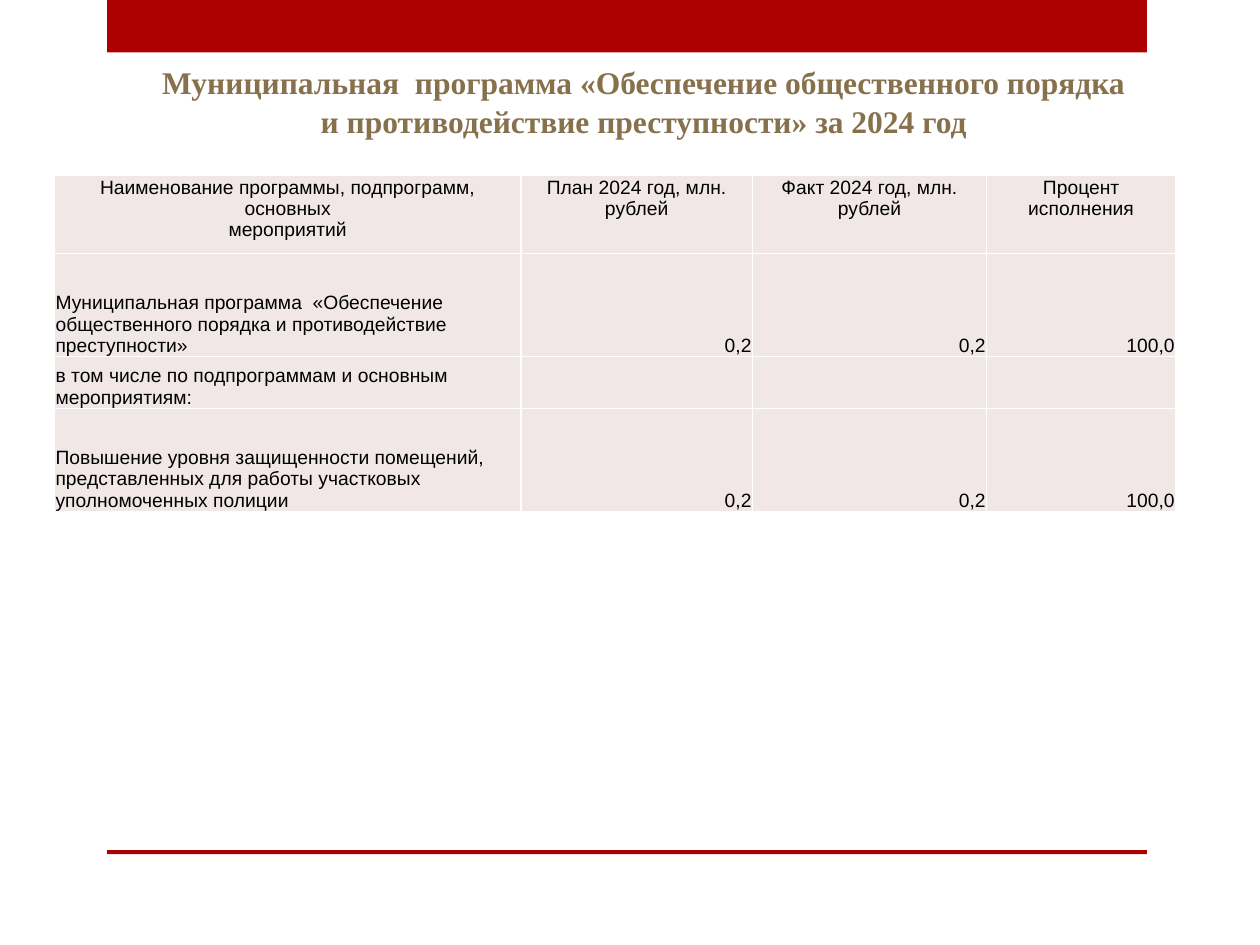
from lxml import etree
from pptx import Presentation
from pptx import util as u
from pptx.dml.color import RGBColor
from pptx.enum import shapes, text
from pptx.oxml import ns

RED, GOLD, PINK, BLACK, WHITE = "AD0101", "87714D", "F1E7E7", "000000", "FFFFFF"
LEFT, CENTER, RIGHT = text.PP_ALIGN.LEFT, text.PP_ALIGN.CENTER, text.PP_ALIGN.RIGHT
TOP, BOTTOM = text.MSO_ANCHOR.TOP, text.MSO_ANCHOR.BOTTOM

TITLE = ("Муниципальная  программа «Обеспечение общественного порядка "
         "и противодействие преступности» за 2024 год")
COLUMN_WIDTHS = (9.4, 4.67, 4.72, 3.81)
ROW_HEIGHTS = (1.57, 2.08, 1.04, 2.08)
# A vertical tab is a line break inside the paragraph
ROWS = (
    ("Наименование программы, подпрограмм, основных\vмероприятий",
     "План 2024 год, млн. рублей", "Факт 2024 год, млн. рублей", "Процент исполнения"),
    ("Муниципальная программа  «Обеспечение общественного порядка и "
     "противодействие преступности»", "0,2", "0,2", "100,0"),
    ("в том числе по подпрограммам и основным мероприятиям:", "", "", ""),
    ("Повышение уровня защищенности помещений, представленных для работы "
     "участковых уполномоченных полиции", "0,2", "0,2", "100,0"),
)


def color(value):
    return RGBColor.from_string(value)


def write(frame, content, *, font="Arial", size=11, fill=BLACK, bold=False,
          align=LEFT, spacing=1.0):
    paragraph = frame.paragraphs[0]
    paragraph.text = content
    paragraph.alignment = align
    paragraph.line_spacing = spacing
    for run in paragraph.runs:
        run.font.name = font
        run.font.size = u.Pt(size)
        run.font.bold = bold
        run.font.color.rgb = color(fill)


def add_bar(slide, left, top, width, height):
    bar = slide.shapes.add_shape(shapes.MSO_SHAPE.RECTANGLE, u.Cm(left), u.Cm(top),
                                 u.Cm(width), u.Cm(height))
    bar.shadow.inherit = False
    bar.fill.solid()
    bar.fill.fore_color.rgb = color(RED)
    bar.line.fill.background()


def add_frame(slide, left, top, width, height):
    """Thick bar along the top edge of the box, thin one along the bottom."""
    thin = 0.08
    add_bar(slide, left, top, width, 1.06)
    add_bar(slide, left, top + height - thin, width, thin)


def add_title(slide, left, top, width, height):
    box = slide.shapes.add_textbox(u.Cm(left), u.Cm(top), u.Cm(width), u.Cm(height))
    frame = box.text_frame
    frame.word_wrap = True
    frame.vertical_anchor = BOTTOM
    write(frame, TITLE, font="Times New Roman", size=18, fill=GOLD, bold=True,
          align=CENTER, spacing=1.05)


def set_borders(cell, value, points):
    properties = cell._tc.get_or_add_tcPr()
    for index, side in enumerate(("lnL", "lnR", "lnT", "lnB")):
        line = etree.Element(ns.qn(f"a:{side}"), w=str(u.Pt(points)))
        solid = etree.SubElement(line, ns.qn("a:solidFill"))
        etree.SubElement(solid, ns.qn("a:srgbClr"), val=value)
        properties.insert(index, line)


def format_cell(cell, content, *, align, anchor):
    cell.margin_left = cell.margin_right = cell.margin_top = u.Cm(0.02)
    cell.margin_bottom = 0
    cell.vertical_anchor = anchor
    cell.fill.solid()
    cell.fill.fore_color.rgb = color(PINK)
    set_borders(cell, WHITE, 1)
    if content:
        write(cell.text_frame, content, align=align)


def add_program_table(slide, left, top):
    shape = slide.shapes.add_table(len(ROWS), len(COLUMN_WIDTHS), u.Cm(left), u.Cm(top),
                                   u.Cm(sum(COLUMN_WIDTHS)), u.Cm(sum(ROW_HEIGHTS)))
    table = shape.table
    table.first_row = table.horz_banding = False
    for column, width in zip(table.columns, COLUMN_WIDTHS):
        column.width = u.Cm(width)
    for row_index, (row, height) in enumerate(zip(table.rows, ROW_HEIGHTS)):
        row.height = u.Cm(height)
        for column_index, content in enumerate(ROWS[row_index]):
            if row_index == 0:
                align, anchor = CENTER, TOP
            else:
                align, anchor = (RIGHT if column_index else LEFT), BOTTOM
            format_cell(table.cell(row_index, column_index), content,
                        align=align, anchor=anchor)


def main():
    presentation = Presentation()
    presentation.slide_width, presentation.slide_height = u.Cm(25.4), u.Cm(19.05)
    slide = presentation.slides.add_slide(presentation.slide_layouts[6])
    # Red bars, heading, then the table of the programme
    add_frame(slide, 2.16, 0, 20.96, 17.22)
    add_title(slide, 2.82, 1.12, 20.32, 1.83)
    add_program_table(slide, 1.1, 3.54)
    presentation.save("out.pptx")


if __name__ == "__main__":
    main()
